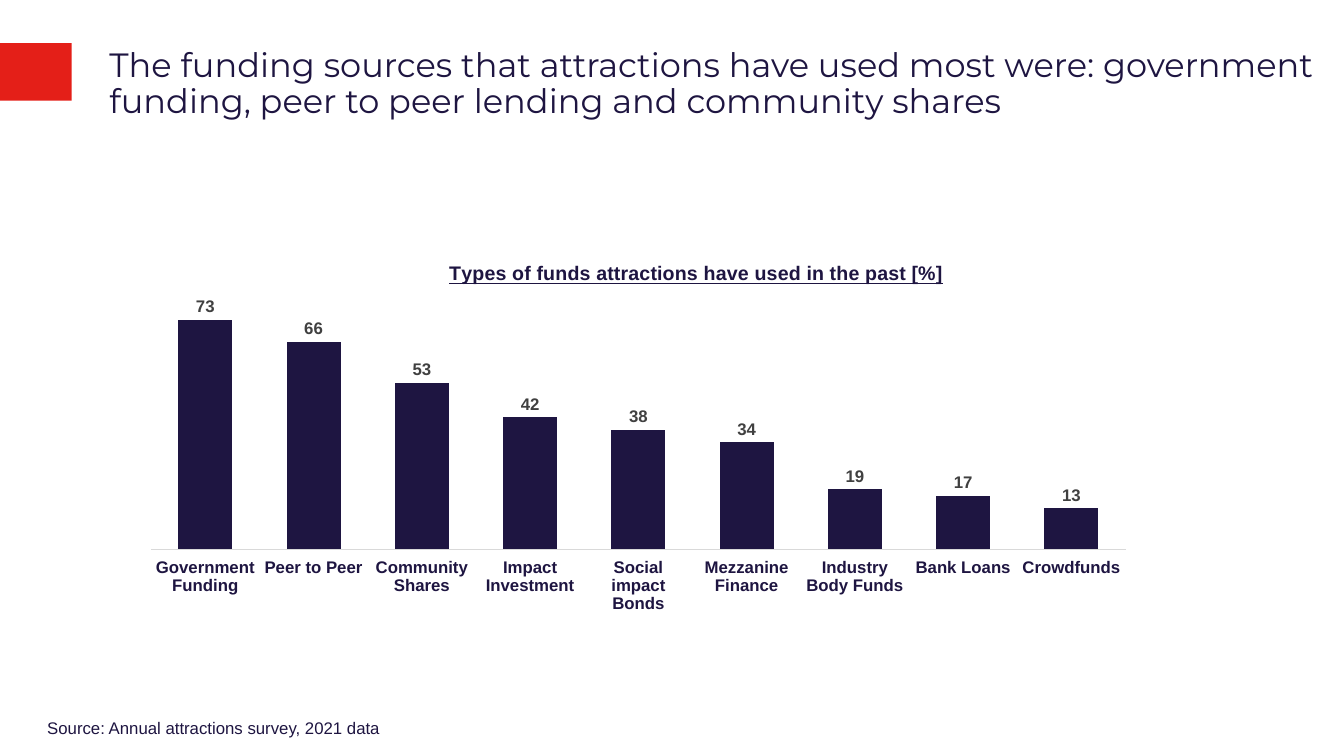
"""Build the slide on the funding sources that attractions have used."""
from dataclasses import dataclass

from lxml.etree import SubElement
from pptx import Presentation
from pptx.chart.chart import Chart
from pptx.chart.data import CategoryChartData
from pptx.dml.color import RGBColor
from pptx.enum.chart import XL_CHART_TYPE as ChartType
from pptx.enum.chart import XL_LABEL_POSITION as LabelPosition
from pptx.enum.chart import XL_TICK_LABEL_POSITION as TickLabelPosition
from pptx.enum.chart import XL_TICK_MARK as TickMark
from pptx.enum.shapes import MSO_SHAPE as Preset
from pptx.enum.text import MSO_ANCHOR as Anchor
from pptx.oxml.ns import qn
from pptx.slide import Slide
from pptx.text.text import Font
from pptx.util import Cm, Pt

NAVY, RED, GREY, LABEL_GREY = "1E1541", "E41F18", "D9D9D9", "404040"


@dataclass(frozen=True)
class Box:
    left: float
    top: float
    width: float
    height: float

    def lengths(self) -> tuple[Cm, Cm, Cm, Cm]:
        return Cm(self.left), Cm(self.top), Cm(self.width), Cm(self.height)


@dataclass(frozen=True)
class TextBlock:
    box: Box
    text: str
    size: int
    font_name: str
    anchor: Anchor
    inset: float


TEXT_BLOCKS = (
    TextBlock(Box(2.51, 1.09, 30.99, 1.45),
              "The funding sources that attractions have used most were: "
              "government funding, peer to peer lending and community shares",
              24, "Montserrat", Anchor.TOP, 0.13),
    TextBlock(Box(0.94, 17.86, 14.99, 0.74),
              "Source: Annual attractions survey, 2021 data",
              12, "Arial", Anchor.BOTTOM, 0),
)
ACCENT_BOX = Box(0, 1.09, 1.81, 1.45)
CHART_BOX = Box(3.3, 6.2, 25.58, 9.32)
CHART_TITLE = "Types of funds attractions have used in the past [%]"
FUND_SHARES = {
    "Government Funding": 73,
    "Peer to Peer": 66,
    "Community Shares": 53,
    "Impact Investment": 42,
    "Social impact Bonds": 38,
    "Mezzanine Finance": 34,
    "Industry Body Funds": 19,
    "Bank Loans": 17,
    "Crowdfunds": 13,
}


def color(value: str) -> RGBColor:
    return RGBColor.from_string(value)


def style_font(font: Font, size: int, hex_color: str,
               bold: bool = False, name: str = "Arial") -> None:
    font.name, font.size, font.bold = name, Pt(size), bold
    font.color.rgb = color(hex_color)


def add_accent(slide: Slide) -> None:
    shape = slide.shapes.add_shape(Preset.RECTANGLE, *ACCENT_BOX.lengths())
    shape.shadow.inherit = False
    shape.fill.solid()
    shape.fill.fore_color.rgb = color(RED)
    shape.line.fill.background()


def add_text(slide: Slide, block: TextBlock) -> None:
    frame = slide.shapes.add_textbox(*block.box.lengths()).text_frame
    frame.word_wrap = True
    frame.vertical_anchor = block.anchor
    frame.margin_top = frame.margin_bottom = Cm(block.inset)
    paragraph = frame.paragraphs[0]
    paragraph.text = block.text
    paragraph.line_spacing = 0.9
    style_font(paragraph.font, block.size, NAVY, name=block.font_name)


def place_part(chart: Chart, tag: str, index: int, **settings: object) -> None:
    """Give a chart part a manual layout as fractions of the chart."""
    part = chart._chartSpace.find(".//" + qn(tag))
    for old_layout in part.findall(qn("c:layout")):
        part.remove(old_layout)
    layout = SubElement(part, qn("c:layout"))
    part.insert(index, layout)
    manual = SubElement(layout, qn("c:manualLayout"))
    for name, value in settings.items():
        SubElement(manual, qn(f"c:{name}")).set("val", str(value))


def add_fund_chart(slide: Slide) -> None:
    data = CategoryChartData()
    data.categories = list(FUND_SHARES)
    data.add_series("Series 1", list(FUND_SHARES.values()))
    chart = slide.shapes.add_chart(
        ChartType.COLUMN_CLUSTERED, *CHART_BOX.lengths(), data).chart
    chart.has_legend = False
    style_font(chart.font, 10, "000000")

    title = chart.chart_title
    title.include_in_layout = False
    paragraph = title.text_frame.paragraphs[0]
    paragraph.text = CHART_TITLE
    style_font(paragraph.font, 14, NAVY, bold=True)
    paragraph.font.underline = True
    place_part(chart, "c:title", 1, xMode="edge", yMode="edge", x=0.31, y=0.03)
    place_part(chart, "c:plotArea", 0, layoutTarget="inner", xMode="edge",
               yMode="edge", x=0.02, y=0.14, w=0.96, h=0.68)

    category_axis = chart.category_axis
    category_axis.major_tick_mark = TickMark.NONE
    category_axis.tick_label_position = TickLabelPosition.LOW
    category_axis.format.line.color.rgb = color(GREY)
    category_axis.format.line.width = Pt(0.75)
    style_font(category_axis.tick_labels.font, 12, NAVY, bold=True)

    value_axis = chart.value_axis
    value_axis.minimum_scale, value_axis.maximum_scale = 0, 80
    value_axis.has_major_gridlines = False
    value_axis.visible = False

    plot = chart.plots[0]
    plot.gap_width = 100
    plot.vary_by_categories = False
    plot.has_data_labels = True
    labels = plot.data_labels
    labels.show_value = True
    labels.position = LabelPosition.OUTSIDE_END
    style_font(labels.font, 12, LABEL_GREY, bold=True)
    fill = plot.series[0].format.fill
    fill.solid()
    fill.fore_color.rgb = color(NAVY)


def main() -> None:
    presentation = Presentation()
    presentation.slide_width, presentation.slide_height = Cm(33.87), Cm(19.05)
    slide = presentation.slides.add_slide(presentation.slide_layouts[6])
    add_accent(slide)
    for block in TEXT_BLOCKS:
        add_text(slide, block)
    add_fund_chart(slide)
    presentation.save("out.pptx")


if __name__ == "__main__":
    main()
